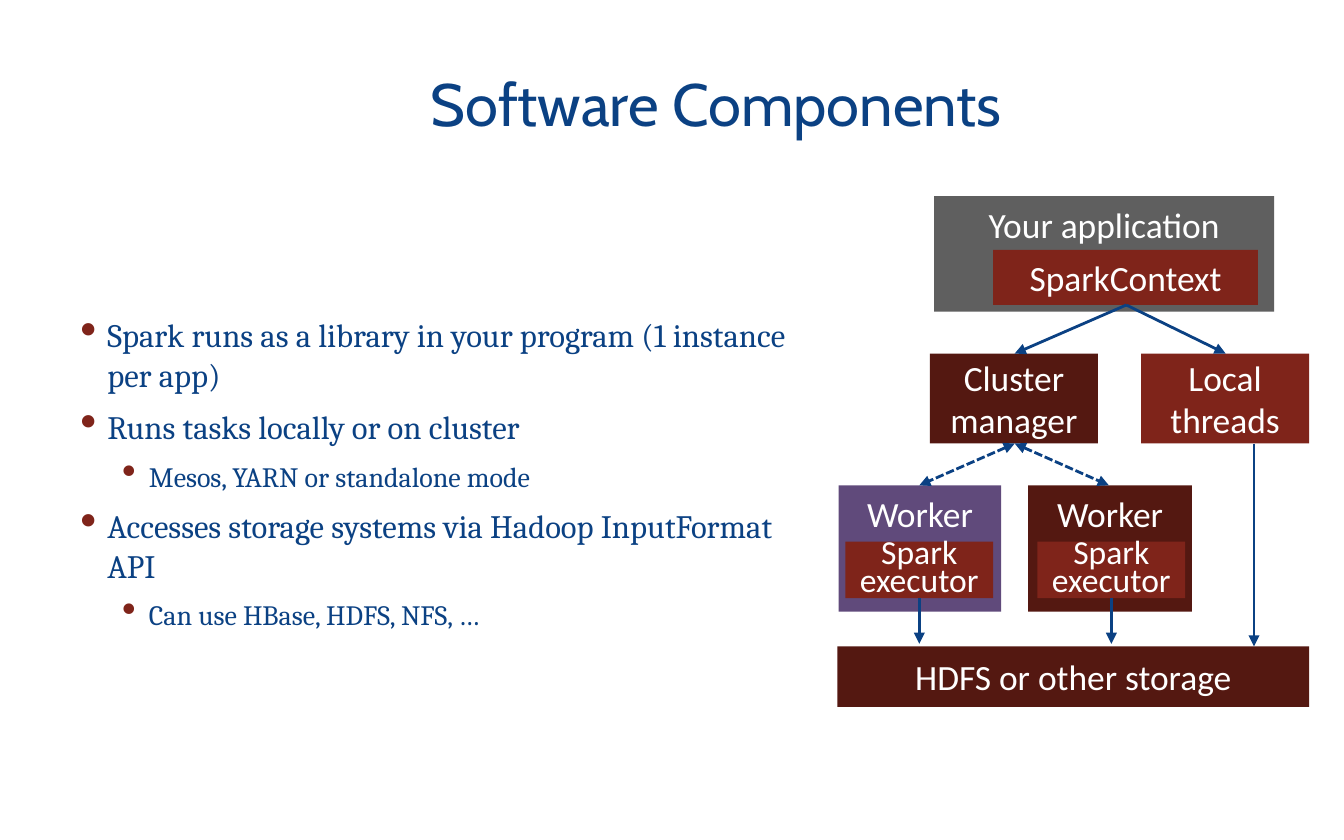
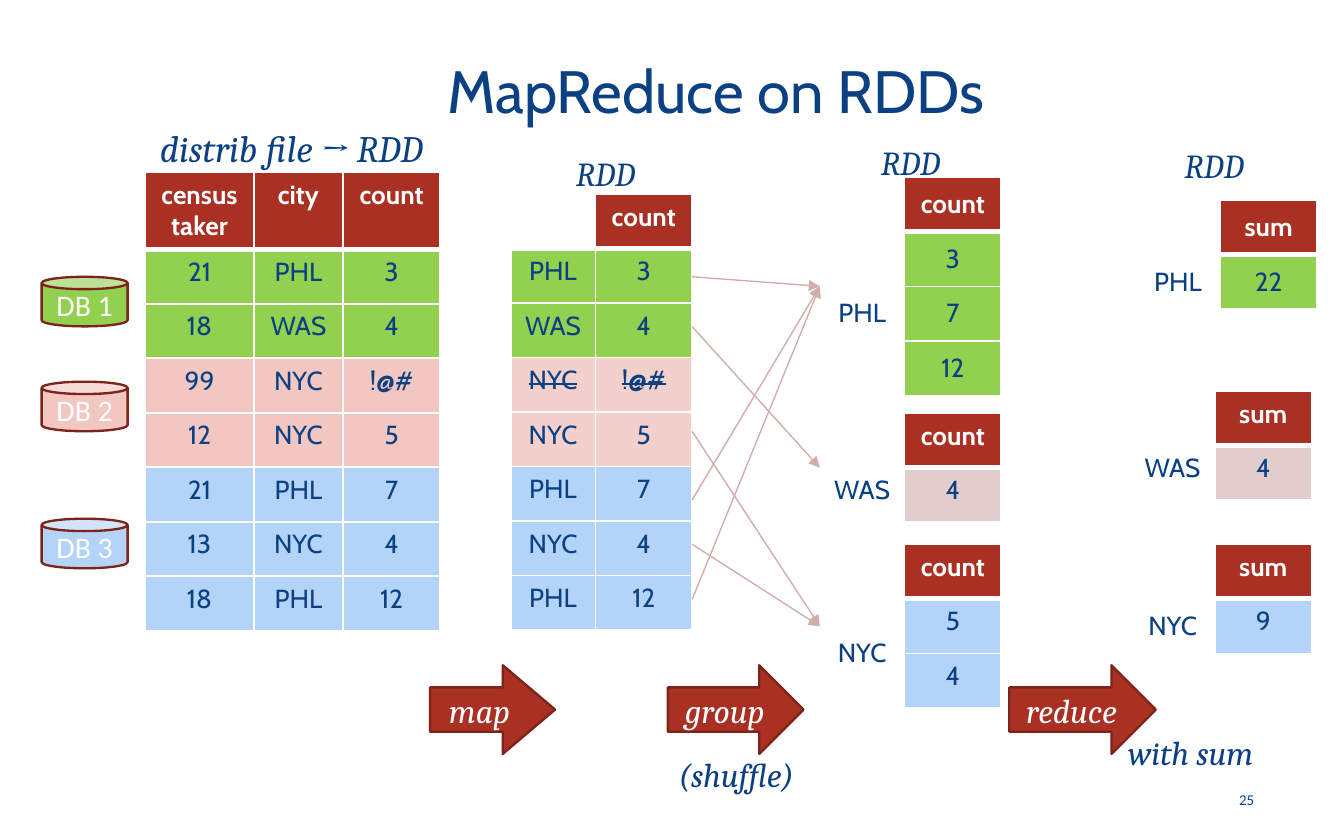
from lxml import etree
from pptx import Presentation
from pptx.dml.color import RGBColor
from pptx.enum import dml, shapes, text
from pptx.oxml.ns import qn
from pptx.util import Pt

NAVY, WHITE, GREY, PURPLE = "0B4183", "FFFFFF", "5F5F5F", "604A7B"
RUST, DARK, EDGE, HEAD = "7F241A", "541811", "7D241A", "A93023"
GREEN, PINK, PALE, BLUE = "92D050", "F2C6C1", "F4D0CC", "B4D3F8"
DUST, WIRE = "E2CDCD", "D1AEAC"
TOP, MID = text.MSO_ANCHOR.TOP, text.MSO_ANCHOR.MIDDLE
LEFT, CENTER, RIGHT = text.PP_ALIGN.LEFT, text.PP_ALIGN.CENTER, text.PP_ALIGN.RIGHT
KIND = shapes.MSO_SHAPE


def hue(code):
    return RGBColor.from_string(code)


def write(frame, words, size, font, color, align=CENTER, **look):
    """Fill a text frame, one paragraph per line, in one style."""
    frame.text = words
    style = {"size": Pt(size), "name": font, **look}
    for par in frame.paragraphs:
        par.alignment = align
        for run in par.runs:
            for key, val in style.items():
                setattr(run.font, key, val)
            run.font.color.rgb = hue(color)


deck = Presentation()
deck.slide_width, deck.slide_height = Pt(720), Pt(450)

# Titles
pages = []
for words, top, high in [("Software Components", 12.2, 85.7), ("MapReduce on RDDs", 24.5, 46.8)]:
    page = deck.slides.add_slide(deck.slide_layouts[5])
    title = page.shapes.title
    title.left, title.top, title.width, title.height = Pt(87.8), Pt(top), Pt(591.8), Pt(high)
    write(title.text_frame, words, 32, "Cabin", NAVY)
    title.text_frame.vertical_anchor = MID
    title.text_frame.auto_size = text.MSO_AUTO_SIZE.NONE
    pages.append(page)
parts, flow = pages

# Bullets on the first slide
points = [
    (0, "Spark runs as a library in your program (1 instance per app)"),
    (0, "Runs tasks locally or on cluster"),
    (1, "Mesos, YARN or standalone mode"),
    (0, "Accesses storage systems via Hadoop InputFormat API"),
    (1, "Can use HBase, HDFS, NFS, …"),
]
body = parts.shapes.add_textbox(Pt(36), Pt(105.1), Pt(399.6), Pt(296.6)).text_frame
body.word_wrap, body.vertical_anchor = True, MID
write(body, "\n".join(line for _, line in points), 17.5, "Cambria", NAVY, LEFT)
for par, (level, _) in zip(body.paragraphs, points):
    size = 15 if level else 17.5
    par.level = level
    par.runs[0].font.size = Pt(size)
    par.space_before, par.space_after = Pt(size * 0.2), Pt(3.8)
    prop = par._p.get_or_add_pPr()
    prop.set("marL", str(Pt(36.7 if level else 14.4)))
    prop.set("indent", str(-Pt(14.4)))
    tint = etree.SubElement(prop, qn("a:buClr"))
    etree.SubElement(tint, qn("a:srgbClr")).set("val", RUST)
    etree.SubElement(prop, qn("a:buSzPct")).set("val", "145000")
    etree.SubElement(prop, qn("a:buChar")).set("char", "•")

# Tables: left, top, widths, rows, row fills, header anchor and values, label, bare labels
people = [
    ("21", "PHL", "3"), ("18", "WAS", "4"), ("99", "NYC", "!@#"), ("12", "NYC", "5"),
    ("21", "PHL", "7"), ("13", "NYC", "4"), ("18", "PHL", "12"),
]
pair = (45.4, 51.8)
grids = [
    (77.8, 92.2, (58.2, 47.8, 52), [("census\ntaker", "city", "count"), *people],
     [GREEN] * 2 + [PINK] * 2 + [BLUE] * 3, TOP, TOP, False),
    (273.6, 104, pair, [("", "count"), *(row[1:] for row in people)],
     [GREEN] * 2 + [PALE] * 2 + [BLUE] * 3, TOP, TOP, False),
]
for left, top, head, city, nums, fill, anchor, label in [
    (439.2, 95, "count", "PHL", ["3", "7", "12"], GREEN, MID, MID),
    (439.2, 221.3, "count", "WAS", ["4"], DUST, TOP, TOP),
    (439.2, 291.6, "count", "NYC", ["5", "4"], BLUE, TOP, MID),
    (608.4, 107.3, "sum", "PHL", ["22"], GREEN, MID, MID),
    (605.5, 209.5, "sum", "WAS", ["4"], DUST, TOP, TOP),
    (605.5, 291.6, "sum", "NYC", ["9"], BLUE, TOP, MID),
]:
    rows = [("", head), (city, nums[0]), *(("", num) for num in nums[1:])]
    grids.append((left, top, pair, rows, [fill] * len(nums), anchor, label, True))

for left, top, widths, rows, fills, anchor, label, bare in grids:
    deep = 29.2
    table = flow.shapes.add_table(len(rows), len(widths), Pt(left), Pt(top),
                                  Pt(sum(widths)), Pt(deep * len(rows))).table
    table.first_row = table.horz_banding = False
    for col, wide in zip(table.columns, widths):
        col.width = Pt(wide)
    for r, row in enumerate(rows):
        table.rows[r].height = Pt(deep)
        for c, words in enumerate(row):
            cell = table.cell(r, c)
            write(cell.text_frame, words, 14, "Cabin", NAVY if r else WHITE, bold=not r)
            cell.vertical_anchor = label if bare and c == 0 else anchor
            prop = cell._tc.get_or_add_tcPr()
            for side in "LRTB":
                thick = 3 if (r, side) in [(0, "B"), (1, "T")] else 1
                edge = etree.SubElement(prop, qn("a:ln" + side), w=str(Pt(thick)))
                solid = etree.SubElement(edge, qn("a:solidFill"))
                etree.SubElement(solid, qn("a:srgbClr")).set("val", WHITE)
            if c == 0 and (bare or not words):
                cell.fill.background()
            else:
                cell.fill.solid()
                cell.fill.fore_color.rgb = hue(fills[r - 1] if r else HEAD)
            if fills[r - 1] == PALE and "!@#" in rows[r]:
                for run in cell.text_frame.paragraphs[0].runs:
                    run.font._element.set("strike", "sngStrike")
    if bare and len(rows) > 2:
        table.cell(1, 0).merge(table.cell(len(rows) - 1, 0))

# Shapes: slide, kind, left, top, width, height, fill, edge, words, size, font
plain = (19, "Calibri")
small = (18, "Calibri")
figs = [
    (parts, KIND.RECTANGLE, *box, None, words, *font)
    for *box, words, font in [
        (500.4, 105.1, 182.2, 61.9, GREY, "Your application", plain),
        (532.1, 133.9, 141.8, 29.5, RUST, "SparkContext", plain),
        (611.3, 189.4, 90, 48.2, RUST, "Local threads", plain),
        (498.2, 189.4, 90, 48.2, DARK, "Cluster manager", plain),
        (449.3, 260, 87.1, 67.7, PURPLE, "Worker", plain),
        (452.9, 290.2, 79.2, 30.2, RUST, "Spark executor", small),
        (550.8, 260, 87.8, 67.7, DARK, "Worker", plain),
        (555.8, 290.2, 79.2, 30.2, RUST, "Spark executor", small),
        (448.6, 346.3, 252.7, 32.4, DARK, "HDFS or other storage", plain),
    ]
]
for left, wide, words in [(230.4, 67, "map"), (357.8, 72.7, "group"), (540.7, 78.5, "reduce")]:
    figs.append((flow, KIND.RIGHT_ARROW, left, 356.4, wide, 47.5, HEAD, EDGE,
                 words, 18, "Cambria"))
for num, (top, fill) in enumerate([(148.3, GREEN), (204.5, PINK), (277.9, BLUE)], 1):
    figs.append((flow, KIND.CAN, 22.3, top, 46.1, 26.6, fill, EDGE, f"DB {num}", 16, "Calibri"))

for page, kind, left, top, wide, high, fill, edge, words, size, font in figs:
    fig = page.shapes.add_shape(kind, Pt(left), Pt(top), Pt(wide), Pt(high))
    fig.shadow.inherit = False
    fig.fill.solid()
    fig.fill.fore_color.rgb = hue(fill)
    if edge:
        fig.line.color.rgb, fig.line.width = hue(edge), Pt(1.25)
    else:
        fig.line.fill.background()
    frame = fig.text_frame
    write(frame, words, size, font, WHITE, italic=font == "Cambria")
    frame.vertical_anchor = TOP if words in ("Your application", "Worker") else MID
    if words == "Worker":
        frame.margin_left = frame.margin_right = 0
    if words == "Spark executor":
        frame.paragraphs[0].line_spacing = 0.7
    if words == "map":
        fig.adjustments[1] = 0.59

# Lines: slide, from, to, colour, width, dashed with two heads
wires = [
    (parts, *ends, NAVY, 1.5, dash)
    for *ends, dash in [
        (603.4, 163.4, 543.6, 189.4, False),
        (603.4, 163.4, 656.6, 189.4, False),
        (543.6, 237.6, 492.5, 260, True),
        (543.6, 237.6, 594, 260, True),
        (492.5, 320.4, 492.5, 344.9, False),
        (595.4, 320.4, 595.4, 344.9, False),
        (671.8, 237.6, 671.8, 346.3, False),
    ]
]
phl, was, nyc = 153.4, 250.6, 335.5
for start, end in [(231.1, nyc), (267.8, phl), (148.3, phl),
                   (175, was), (291.6, nyc), (321.1, phl)]:
    wires.append((flow, 370.8, start, 439.2, end, WIRE, 0.75, False))

for page, *ends, color, wide, dash in wires:
    wire = page.shapes.add_connector(shapes.MSO_CONNECTOR.STRAIGHT, *map(Pt, ends))
    wire.line.color.rgb, wire.line.width = hue(color), Pt(wide)
    if dash:
        wire.line.dash_style = dml.MSO_LINE.SQUARE_DOT
    prop = wire.element.spPr
    for tip in ["headEnd", "tailEnd"] if dash else ["tailEnd"]:
        etree.SubElement(prop.find(qn("a:ln")), qn("a:" + tip)).set("type", "triangle")
    etree.SubElement(prop, qn("a:effectLst"))

# Labels on the second slide
for left, top, wide, high, words, size in [
    (354.2, 400.3, 80.6, 28.8, "(shuffle)", 18),
    (594, 388.8, 87.8, 28.8, "with sum", 18),
    (69.1, 63.4, 174.2, 31.7, "distrib file → RDD", 20),
    (298.1, 78.5, 52.6, 28.8, "RDD", 18),
    (461.5, 72.7, 52.6, 28.8, "RDD", 18),
    (624.2, 74.2, 52.6, 28.8, "RDD", 18),
]:
    frame = flow.shapes.add_textbox(Pt(left), Pt(top), Pt(wide), Pt(high)).text_frame
    frame.word_wrap = False
    write(frame, words, size, "Cambria", NAVY, italic=True)

number = flow.shapes.add_textbox(Pt(646.6), Pt(416.2), Pt(32.4), Pt(23.8)).text_frame
number.word_wrap, number.vertical_anchor = True, MID
write(number, "25", 8, "Calibri", NAVY, RIGHT)

deck.save("out.pptx")
